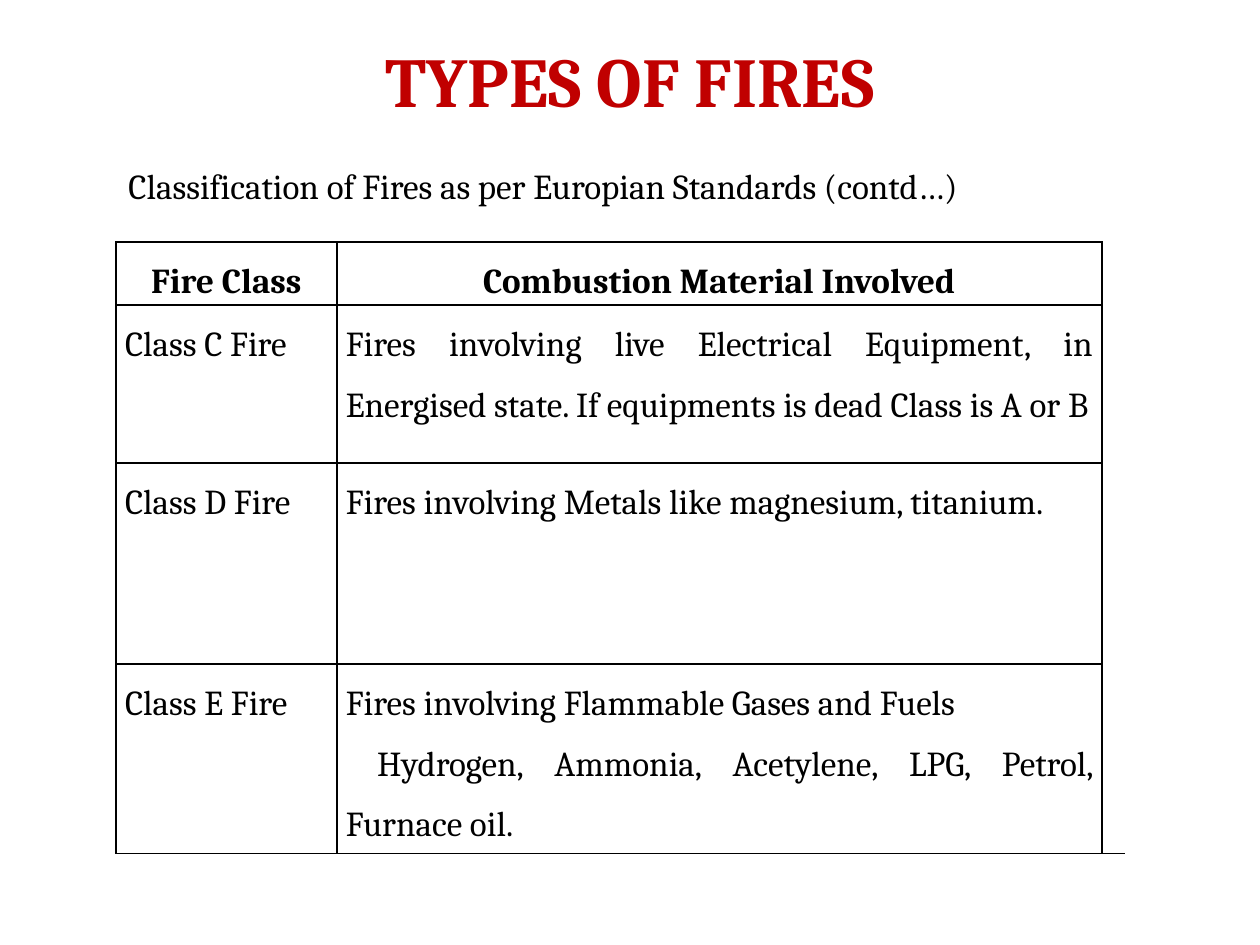
from lxml import etree
from pptx import Presentation
from pptx.dml.color import RGBColor
from pptx.enum.text import MSO_ANCHOR, PP_ALIGN
from pptx.oxml.ns import qn
from pptx.util import Cm, Pt

TOP = MSO_ANCHOR.TOP
CENTER, JUSTIFY = PP_ALIGN.CENTER, PP_ALIGN.JUSTIFY
RED = RGBColor(0xC0, 0x00, 0x00)
BLACK = RGBColor(0x00, 0x00, 0x00)
WHITE = RGBColor(0xFF, 0xFF, 0xFF)

TITLE_FONT = {"name": "Cambria", "size": Pt(40), "bold": True}
BODY_FONT = {"name": "Cambria", "size": Pt(20), "bold": False}
HEADER_FONT = {**BODY_FONT, "bold": True}
CELL_FORMAT = {
    "margin_left": Cm(0.18),
    "margin_right": Cm(0.18),
    "margin_top": 0,
    "margin_bottom": 0,
    "vertical_anchor": TOP,
}

COLUMN_WIDTHS = [4.45, 15.42, 0.46]
ROW_HEIGHTS = [1.22, 3.18, 4.06, 3.66]
FIRE_CLASSES = [
    ("Fire Class", ["Combustion Material Involved"]),
    ("Class C Fire", ["Fires involving live Electrical Equipment, in Energised state. "
                      "If equipments is dead Class is A or B"]),
    ("Class D Fire", ["Fires involving Metals like magnesium, titanium."]),
    ("Class E Fire", ["Fires involving Flammable Gases and Fuels",
                      "Hydrogen, Ammonia, Acetylene, LPG, Petrol, Furnace oil."]),
]


def apply_format(target, values):
    for attribute, value in values.items():
        setattr(target, attribute, value)


def write_paragraph(paragraph, wording, font, color, alignment):
    paragraph.alignment = alignment
    run = paragraph.add_run()
    run.text = wording
    apply_format(run.font, font)
    run.font.color.rgb = color


def add_line(slide, left, top, width, height, wording, font, color, alignment, inset):
    frame = slide.shapes.add_textbox(Cm(left), Cm(top), Cm(width), Cm(height)).text_frame
    apply_format(frame, {"word_wrap": True, "vertical_anchor": TOP, "margin_top": Cm(inset)})
    write_paragraph(frame.paragraphs[0], wording, font, color, alignment)


def style_cell(cell, sides):
    properties = cell._tc.get_or_add_tcPr()
    for side in sides:
        border = etree.SubElement(properties, qn(f"a:ln{side}"), w=str(Pt(1)))
        ink = etree.SubElement(border, qn("a:solidFill"))
        etree.SubElement(ink, qn("a:srgbClr"), val=str(BLACK))
    apply_format(cell, CELL_FORMAT)
    cell.fill.solid()
    cell.fill.fore_color.rgb = WHITE


def fill_cell(cell, lines, font, alignment):
    frame = cell.text_frame
    for index, wording in enumerate(lines):
        paragraph = frame.add_paragraph() if index else frame.paragraphs[0]
        paragraph.line_spacing = 1.5
        if index:
            paragraph._p.get_or_add_pPr().set("indent", str(Cm(0.63)))
        write_paragraph(paragraph, wording, font, BLACK, alignment)


def add_fire_table(slide, left, top):
    table = slide.shapes.add_table(
        len(ROW_HEIGHTS), len(COLUMN_WIDTHS), Cm(left), Cm(top),
        Cm(sum(COLUMN_WIDTHS)), Cm(sum(ROW_HEIGHTS))).table
    apply_format(table, {"first_row": False, "horz_banding": False})
    for column, width in zip(table.columns, COLUMN_WIDTHS):
        column.width = Cm(width)
    for row, height in zip(table.rows, ROW_HEIGHTS):
        row.height = Cm(height)

    last_row = len(ROW_HEIGHTS) - 1
    for index, (fire_class, materials) in enumerate(FIRE_CLASSES):
        font, alignment = (BODY_FONT, JUSTIFY) if index else (HEADER_FONT, CENTER)
        for column, lines in enumerate([[fire_class], materials]):
            cell = table.cell(index, column)
            style_cell(cell, "LRTB")
            fill_cell(cell, lines, font, alignment)
        style_cell(table.cell(index, 2), "LB" if index in (0, last_row) else "L")
    table.cell(0, 2).merge(table.cell(last_row, 2))


def main():
    deck = Presentation()
    deck.slide_width, deck.slide_height = Cm(25.4), Cm(19.05)
    slide = deck.slides.add_slide(deck.slide_layouts[6])
    add_line(slide, 1.27, 0.76, 22.86, 3.18, "TYPES OF FIRES",
             TITLE_FONT, RED, CENTER, 0)
    add_line(slide, 2.34, 3.18, 20.57, 1.27,
             "Classification of Fires as per Europian Standards (contd…)",
             BODY_FONT, BLACK, JUSTIFY, 0.13)
    add_fire_table(slide, 2.34, 4.88)
    deck.save("out.pptx")


if __name__ == "__main__":
    main()
